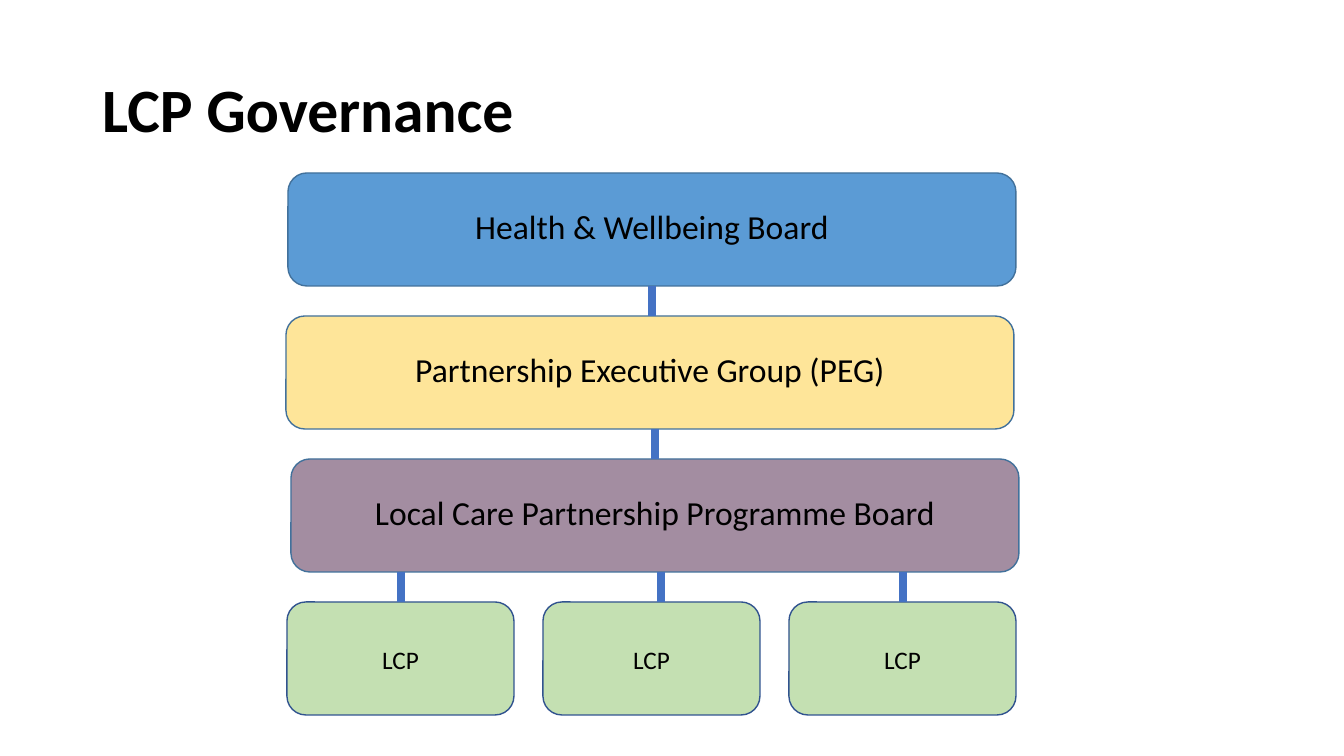
"""Build the LCP Governance slide: three boards stacked above three LCP boxes."""
from lxml import etree
from pptx import Presentation
from pptx import util as u
from pptx.dml.color import RGBColor
from pptx.enum import shapes, text
from pptx.oxml.ns import qn

PX = 914400 / 100.8
COLOURS = {
    "black": "000000", "blue": "5B9BD5", "yellow": "FEE599", "mauve": "A38DA1",
    "green": "C4E0B2", "board edge": "42719B", "lcp edge": "31538F", "link": "4472C4",
}
FIRST_TOP, PITCH, HEIGHT = 173, 143, 113
BOARD_WIDTH = 728


def px(length):
    return u.Emu(round(length * PX))


def write(frame, wording, size, align, spacing, bold=False):
    frame.word_wrap = True
    frame.vertical_anchor = text.MSO_ANCHOR.MIDDLE
    para = frame.paragraphs[0]
    para.alignment = align
    para.line_spacing = spacing
    span = para.add_run()
    span.text = wording
    span.font.name = "Calibri"
    span.font.size = u.Pt(size)
    span.font.bold = bold
    span.font.color.rgb = RGBColor.from_string(COLOURS["black"])


deck = Presentation()
deck.slide_width, deck.slide_height = px(1344), px(756)
page = deck.slides.add_slide(deck.slide_layouts[5])

title = page.shapes.title
title.left, title.top, title.width, title.height = px(92), px(40), px(1159), px(146)
write(title.text_frame, "LCP Governance", 44, text.PP_ALIGN.LEFT, 0.9, bold=True)

boxes = [
    ("Health & Wellbeing Board", 0, 288, BOARD_WIDTH, "blue"),
    ("Partnership Executive Group (PEG)", 1, 286, BOARD_WIDTH, "yellow"),
    ("Local Care Partnership Programme Board", 2, 291, BOARD_WIDTH, "mauve"),
    ("LCP", 3, 287, 227, "green"),
    ("LCP", 3, 543, 217, "green"),
    ("LCP", 3, 789, 227, "green"),
]
for wording, row, left, width, fill in boxes:
    is_board = row < 3
    box = page.shapes.add_shape(
        shapes.MSO_SHAPE.ROUNDED_RECTANGLE,
        px(left), px(FIRST_TOP + row * PITCH), px(width), px(HEIGHT))
    box.shadow.inherit = False
    box.fill.solid()
    box.fill.fore_color.rgb = RGBColor.from_string(COLOURS[fill])
    box.line.color.rgb = RGBColor.from_string(COLOURS["board edge" if is_board else "lcp edge"])
    box.line.width = u.Pt(1)
    box.text_frame.margin_bottom = px(15 if is_board else 5)
    write(box.text_frame, wording, 24 if is_board else 18, text.PP_ALIGN.CENTER, 1.07)

links = [(0, 652), (1, 655), (2, 401), (2, 661), (2, 903)]
for row, centre in links:
    top = FIRST_TOP + row * PITCH + HEIGHT
    link = page.shapes.add_connector(
        shapes.MSO_CONNECTOR.STRAIGHT,
        px(centre), px(top), px(centre), px(top + PITCH - HEIGHT))
    link.line.color.rgb = RGBColor.from_string(COLOURS["link"])
    link.line.width = u.Pt(6)
    etree.SubElement(link._element.spPr, qn("a:effectLst"))

deck.save("out.pptx")
